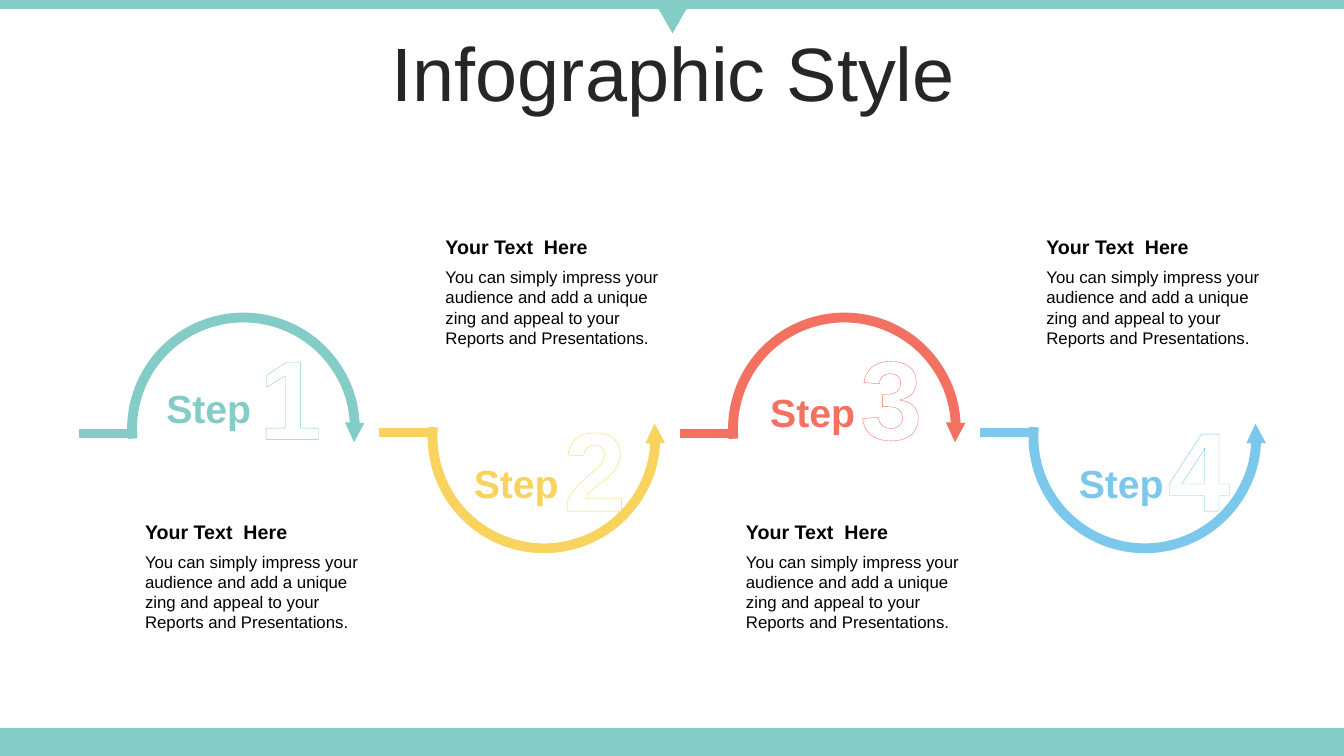
from typing import NamedTuple

from lxml.etree import SubElement
from pptx import Presentation
from pptx.dml.color import RGBColor
from pptx.enum.shapes import MSO_CONNECTOR as Connector, MSO_SHAPE as Preset
from pptx.enum.text import MSO_ANCHOR as Anchor, MSO_AUTO_SIZE as AutoSize, PP_ALIGN as Align
from pptx.oxml.ns import qn
from pptx.util import Inches, Pt

TEAL = RGBColor(0x84, 0xCC, 0xC6)
YELLOW = RGBColor(0xF8, 0xD4, 0x5E)
CORAL = RGBColor(0xF2, 0x71, 0x61)
BLUE = RGBColor(0x7C, 0xC8, 0xEC)
BLACK = RGBColor(0, 0, 0)
CHARCOAL = RGBColor(0x26, 0x26, 0x26)
WHITE = RGBColor(0xFF, 0xFF, 0xFF)

PAGE_WIDTH, PAGE_HEIGHT = 13.33, 7.5
STEP_PITCH = 2.98
ARC_LEFT, ARC_SIZE = 1.31, 2.21
ARC_START, ARC_END = 103.88, 3.02
TEXT_LEFT, TEXT_WIDTH = 1.34, 2.5
LEAD_LENGTH = 0.56
ARC_WEIGHT, DIGIT_WEIGHT = 7, 2.5

HEADING = "Your Text  Here"
BODY = ("You can simply impress your audience and add a unique zing "
        "and appeal to your Reports and Presentations.")

MIDDLE = {"vertical_anchor": Anchor.MIDDLE}
CENTERED = {"alignment": Align.CENTER}
TITLE_FRAME = MIDDLE | {"auto_size": AutoSize.NONE}
TITLE_PARA = CENTERED | {"line_spacing": 0.9, "space_before": Pt(10)}
NO_MARGINS = {f"margin_{side}": 0 for side in ("left", "top", "right", "bottom")}


class Step(NamedTuple):
    """Hold what is particular to one step."""
    color: RGBColor
    label_left: float
    label_top: float
    digit_left: float


class Level(NamedTuple):
    """Hold the heights shared by steps that bend the same way."""
    flips: tuple
    arc_top: float
    lead_y: float
    digit_top: float
    heading_top: float
    body_top: float


STEPS = (
    Step(TEAL, 1.54, 3.76, 2.57),
    Step(YELLOW, 4.59, 4.51, 5.59),
    Step(CORAL, 7.53, 3.8, 8.53),
    Step(BLUE, 10.59, 4.51, 11.58),
)
LEVELS = (
    Level(("flipH",), 3.15, 4.3, 3.25, 5.11, 5.42),
    Level(("flipH", "flipV"), 3.23, 4.29, 3.96, 2.28, 2.6),
)


def set_values(target, values):
    """Set each named attribute on the target."""
    for name, value in values.items():
        setattr(target, name, value)


def set_line(shape, color):
    """Give an arc or connector its thick solid line."""
    set_values(shape.line, {"width": Pt(ARC_WEIGHT)})
    shape.line.color.rgb = color


def add_filled(page, preset, place, color):
    """Add a plain filled preset shape without an outline."""
    shape = page.shapes.add_shape(preset, *map(Inches, place))
    shape.shadow.inherit = False
    shape.fill.solid()
    shape.fill.fore_color.rgb = color
    shape.line.fill.background()
    return shape


def add_text(page, place, text, size, color, bold=False, frame_format=None, para_format=None):
    """Add a wrapped text box and return its only run."""
    frame = page.shapes.add_textbox(*map(Inches, place)).text_frame
    set_values(frame, {"word_wrap": True, "auto_size": AutoSize.SHAPE_TO_FIT_TEXT})
    set_values(frame, frame_format or {})
    para = frame.paragraphs[0]
    set_values(para, para_format or {})
    span = para.add_run()
    span.text = text
    set_values(span.font, {"name": "Arial", "size": Pt(size), "bold": bold})
    span.font.color.rgb = color
    return span


def add_digit(page, left, top, text, color):
    """Add a large white digit with a colored letter outline."""
    span = add_text(page, (left, top, 0.7, 1.28), text, 80, WHITE, True, NO_MARGINS)
    properties = span.font._element if hasattr(span.font, "_element") else span._r.get_or_add_rPr()
    outline = SubElement(properties, qn("a:ln"), w=str(Pt(DIGIT_WEIGHT)))
    fill = SubElement(outline, qn("a:solidFill"))
    SubElement(fill, qn("a:srgbClr"), val=str(color))
    properties.insert(0, outline)


def add_arc_arrow(page, left, top, flips, color):
    """Add a half circle whose arrowhead sits at its right end."""
    place = (left, top, ARC_SIZE, ARC_SIZE)
    arc = page.shapes.add_shape(Preset.ARC, *map(Inches, place))
    arc.shadow.inherit = False
    arc.fill.background()
    arc.adjustments[0], arc.adjustments[1] = ARC_START, ARC_END
    set_line(arc, color)
    properties = arc._element.spPr
    for flip in flips:
        properties.find(qn("a:xfrm")).set(flip, "1")
    SubElement(properties.find(qn("a:ln")), qn("a:headEnd"), type="triangle", w="sm", len="sm")


def add_lead_line(page, right, y, color):
    """Add the short line that leads into an arc."""
    ends = map(Inches, (right, y, right - LEAD_LENGTH, y))
    line = page.shapes.add_connector(Connector.STRAIGHT, *ends)
    set_line(line, color)
    SubElement(line._element.spPr, qn("a:effectLst"))


def add_step(page, index, step):
    """Add one step: arc arrow, lead line, digit, label and text."""
    level = LEVELS[index % len(LEVELS)]
    shift = index * STEP_PITCH
    left = TEXT_LEFT + shift
    add_arc_arrow(page, ARC_LEFT + shift, level.arc_top, level.flips, step.color)
    add_lead_line(page, left, level.lead_y, step.color)
    add_digit(page, step.digit_left, level.digit_top, str(index + 1), step.color)
    add_text(page, (step.label_left, step.label_top, 1.06, 0.57), "Step", 28, step.color,
             True, MIDDLE, CENTERED)
    add_text(page, (left, level.heading_top, TEXT_WIDTH, 0.34), HEADING, 14, BLACK, True)
    add_text(page, (left, level.body_top, TEXT_WIDTH, 0.91), BODY, 12, BLACK)


def add_frame(page):
    """Add the bars at the page edges and the pointer under the top bar."""
    for top, height in ((7.22, 0.28), (0, 0.09)):
        add_filled(page, Preset.RECTANGLE, (0, top, PAGE_WIDTH, height), TEAL)
    pointer = add_filled(page, Preset.ISOSCELES_TRIANGLE, (6.48, 0, 0.38, 0.33), TEAL)
    pointer.rotation = 180


def main():
    """Build the four-step infographic and save it."""
    deck = Presentation()
    set_values(deck, {"slide_width": Inches(PAGE_WIDTH), "slide_height": Inches(PAGE_HEIGHT)})
    page = deck.slides.add_slide(deck.slide_layouts[6])
    add_frame(page)
    add_text(page, (0.35, 0.37, 12.66, 0.79), "Infographic Style", 54, CHARCOAL,
             frame_format=TITLE_FRAME, para_format=TITLE_PARA)
    for index, step in enumerate(STEPS):
        add_step(page, index, step)
    deck.save("out.pptx")


if __name__ == "__main__":
    main()
